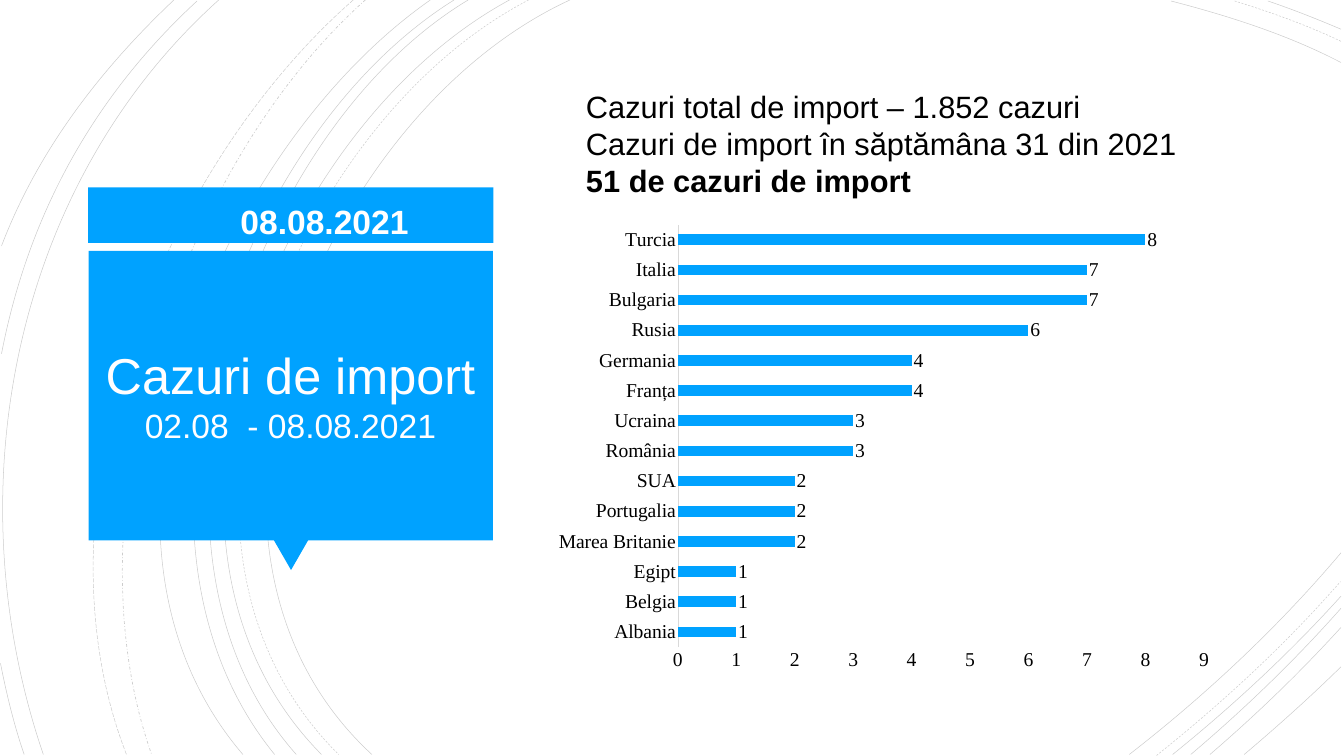
from lxml import etree
from pptx import Presentation
from pptx import util as u
from pptx.chart.data import CategoryChartData
from pptx.dml.color import RGBColor
from pptx.enum import chart as ch, dml, shapes, text
from pptx.oxml import parse_xml
from pptx.oxml.ns import qn

BLUE, WHITE, BLACK, GREY = "00A2FF", "FFFFFF", "000000", "D9D9D9"
C_NS = "http://schemas.openxmlformats.org/drawingml/2006/chart"
SOLID, DASH = dml.MSO_LINE.SOLID, dml.MSO_LINE.DASH
DASH_DOT, LONG_DASH = dml.MSO_LINE.DASH_DOT, dml.MSO_LINE.LONG_DASH

# Background arcs: start, two control points, end; dash style
ARCS = [
    ((11.31, 0), (6.3, 2.3), (2.86, 10.8), (7.38, 14.97), SOLID),
    ((26.61, 1.24), (25.56, 0.69), (24.36, 0.31), (23.24, 0.02), SOLID),
    ((22.41, 14.97), (23.93, 13.79), (25.37, 12.44), (26.61, 10.97), SOLID),
    ((10.49, 0), (5.69, 2.49), (2.45, 10.75), (6.72, 14.97), DASH),
    ((26.61, 0.82), (25.94, 0.5), (25.21, 0.24), (24.5, 0.02), DASH),
    ((22.95, 14.99), (24.25, 13.95), (25.5, 12.8), (26.6, 11.54), DASH),
    ((10.11, 0), (5.39, 2.55), (2.19, 10.74), (6.38, 14.97), SOLID),
    ((26.61, 0.58), (26.14, 0.38), (25.66, 0.19), (25.16, 0.02), SOLID),
    ((23.27, 14.97), (24.46, 14.01), (25.59, 12.96), (26.61, 11.83), SOLID),
    ((9.29, 0), (4.87, 2.66), (2.19, 10.82), (5.88, 14.97), SOLID),
    ((23.63, 14.97), (24.68, 14.08), (25.69, 13.11), (26.61, 12.07), SOLID),
    ((9.01, 0), (4.61, 2.75), (1.94, 10.67), (5.45, 14.97), SOLID),
    ((24.01, 14.97), (24.93, 14.18), (25.8, 13.34), (26.61, 12.45), SOLID),
    ((8.54, 0), (4.34, 2.93), (1.06, 10.58), (4.82, 14.97), SOLID),
    ((24.69, 14.97), (25.34, 14.42), (25.99, 13.84), (26.61, 13.23), SOLID),
    ((7.25, 0), (3.52, 3.33), (1.31, 10.18), (3.01, 14.97), DASH_DOT),
    ((7.01, 0), (3.15, 3.38), (0.57, 9.98), (2.51, 14.97), LONG_DASH),
    ((4.34, 0), (0.22, 3.7), (-0.91, 9.8), (0.86, 14.97), SOLID),
    ((3.91, 0.02), (1.85, 1.92), (0.56, 4.27), (0.03, 7.02), SOLID),
    ((0.01, 13.16), (0.13, 13.77), (0.28, 14.39), (0.48, 14.97), SOLID),
    ((3.45, 0), (1.99, 1.38), (0.75, 2.99), (0.03, 4.88), SOLID),
]

CASES = {
    "Albania": 1, "Belgia": 1, "Egipt": 1, "Marea Britanie": 2, "Portugalia": 2,
    "SUA": 2, "România": 3, "Ucraina": 3, "Franța": 4, "Germania": 4,
    "Rusia": 6, "Bulgaria": 7, "Italia": 7, "Turcia": 8,
}


def rgb(value):
    return RGBColor.from_string(value)


class Deck:
    """Holds the style and the current slide."""

    font, chart_font, chart_size = "Arial", "Times New Roman", 28

    def __init__(self, slide):
        self.s = slide

    def style(self, font, name, size, color, bold=False):
        values = {"name": name, "size": u.Pt(size), "bold": bold}
        for key, value in values.items():
            setattr(font, key, value)
        font.color.rgb = rgb(color)

    def arc(self, *points, dash):
        start, *rest = [tuple(map(u.Inches, point)) for point in points]
        builder = self.s.shapes.build_freeform(*start)
        builder.add_line_segments(rest, close=False)
        sp = builder.convert_to_shape()

        # Join the three segments into one cubic curve
        segments = list(sp._element.iter(qn("a:lnTo")))
        outline = segments[0].getparent()
        curve = etree.SubElement(outline, qn("a:cubicBezTo"))
        for segment in segments:
            curve.append(segment[0])
            outline.remove(segment)

        sp.shadow.inherit = False
        sp.fill.background()
        sp.line.width = u.Pt(1 if dash == DASH_DOT else 0.75)
        sp.line.color.rgb = rgb(BLACK)
        sp.line.dash_style = dash
        color = sp._element.spPr.find(qn("a:ln")).find(".//" + qn("a:srgbClr"))
        etree.SubElement(color, qn("a:alpha"), val="20000")

    def block(self, kind, x, y, w, h, rotation=0):
        sp = self.s.shapes.add_shape(kind, *map(u.Inches, (x, y, w, h)))
        sp.shadow.inherit = False
        sp.fill.solid()
        sp.fill.fore_color.rgb = rgb(BLUE)
        sp.line.fill.background()
        sp.rotation = rotation

    def title(self, x, y, w, h, lines):
        sp = self.s.shapes.title
        sp.left, sp.top, sp.width, sp.height = map(u.Inches, (x, y, w, h))
        tf = sp.text_frame
        tf.auto_size = text.MSO_AUTO_SIZE.NONE
        tf.vertical_anchor = text.MSO_ANCHOR.MIDDLE
        for side in ("left", "top", "right", "bottom"):
            setattr(tf, f"margin_{side}", u.Inches(0.06))
        p = tf.paragraphs[0]
        p.alignment = text.PP_ALIGN.CENTER
        for i, (line, size) in enumerate(lines):
            if i:
                p.add_line_break()
            r = p.add_run()
            r.text = line
            self.style(r.font, self.font, size, "FFFEFF")
        self.s.shapes._spTree.append(sp._element)  # in front of the blue panel

    def text(self, x, y, w, h, lines, size, color, align=text.PP_ALIGN.LEFT):
        tf = self.s.shapes.add_textbox(*map(u.Inches, (x, y, w, h))).text_frame
        tf.word_wrap = True
        tf.auto_size = text.MSO_AUTO_SIZE.SHAPE_TO_FIT_TEXT
        for i, (line, bold) in enumerate(lines):
            p = tf.add_paragraph() if i else tf.paragraphs[0]
            p.alignment = align
            r = p.add_run()
            r.text = line
            self.style(r.font, self.font, size, color, bold)

    def bar_chart(self, x, y, w, h, plot_box, name, values):
        data = CategoryChartData(number_format="0")
        data.categories = list(values)
        data.add_series(name, list(values.values()))
        chart = self.s.shapes.add_chart(
            ch.XL_CHART_TYPE.BAR_CLUSTERED, *map(u.Inches, (x, y, w, h)), data).chart
        chart.has_legend = chart.has_title = False
        self.style(chart.font, self.chart_font, self.chart_size, BLACK)

        # Axes
        for axis in (chart.category_axis, chart.value_axis):
            axis.major_tick_mark = axis.minor_tick_mark = ch.XL_TICK_MARK.NONE
            axis.has_major_gridlines = False
            self.style(axis.tick_labels.font, self.chart_font, self.chart_size, BLACK)
        chart.category_axis.format.line.color.rgb = rgb(GREY)
        chart.category_axis.format.line.width = u.Pt(0.75)
        axis = chart.value_axis
        axis.format.line.fill.background()
        axis.minimum_scale, axis.maximum_scale, axis.major_unit = 0, 9, 1

        # Bars and labels
        plot = chart.plots[0]
        plot.gap_width, plot.vary_by_categories = 182, False
        series = plot.series[0]
        series.format.fill.solid()
        series.format.fill.fore_color.rgb = rgb(BLUE)
        labels = series.data_labels
        labels.show_value = True
        labels.position = ch.XL_LABEL_POSITION.OUTSIDE_END
        self.style(labels.font, self.chart_font, self.chart_size, BLACK)

        # Plot area as fractions of the chart
        area = chart._chartSpace.find(".//" + qn("c:plotArea"))
        for old in area.findall(qn("c:layout")):
            area.remove(old)
        px, py, pw, ph = plot_box
        sizes = {"x": (px - x) / w, "y": (py - y) / h, "w": pw / w, "h": ph / h}
        parts = "".join(f'<c:{k} val="{v:.4f}"/>' for k, v in sizes.items())
        area.insert(0, parse_xml(
            f'<c:layout xmlns:c="{C_NS}"><c:manualLayout><c:layoutTarget val="inner"/>'
            f'<c:xMode val="edge"/><c:yMode val="edge"/>{parts}</c:manualLayout></c:layout>'))


def main():
    prs = Presentation()
    prs.slide_width, prs.slide_height = u.Inches(26.67), u.Inches(15)
    deck = Deck(prs.slides.add_slide(prs.slide_layouts[5]))

    # Background
    for *points, dash in ARCS:
        deck.arc(*points, dash=dash)

    # Blue panel with pointer
    kinds = shapes.MSO_SHAPE
    deck.block(kinds.RECTANGLE, 1.75, 3.72, 8.04, 1.1)
    deck.block(kinds.ISOSCELES_TRIANGLE, 5.43, 10.71, 0.69, 0.6, rotation=180)
    deck.block(kinds.RECTANGLE, 1.76, 4.98, 8.02, 5.74)
    deck.title(1.94, 5.14, 7.65, 5.37,
               [("Cazuri de import", 72), ("02.08  - 08.08.2021", 48)])

    # Summary and date
    deck.text(11.53, 1.69, 12.01, 2.32, [
        ("Cazuri total de import – 1.852 cazuri", False),
        ("Cazuri de import în săptămâna 31 din 2021", False),
        ("51 de cazuri de import", True)], 44, BLACK)
    deck.text(3.89, 3.94, 5.1, 0.91, [("08.08.2021", True)], 48, WHITE,
              text.PP_ALIGN.CENTER)

    # Cases by country
    deck.bar_chart(10.82, 4.28, 13.43, 9.21, (13.45, 4.46, 10.44, 8.38),
                   "Series 1", CASES)
    prs.save("out.pptx")


if __name__ == "__main__":
    main()
